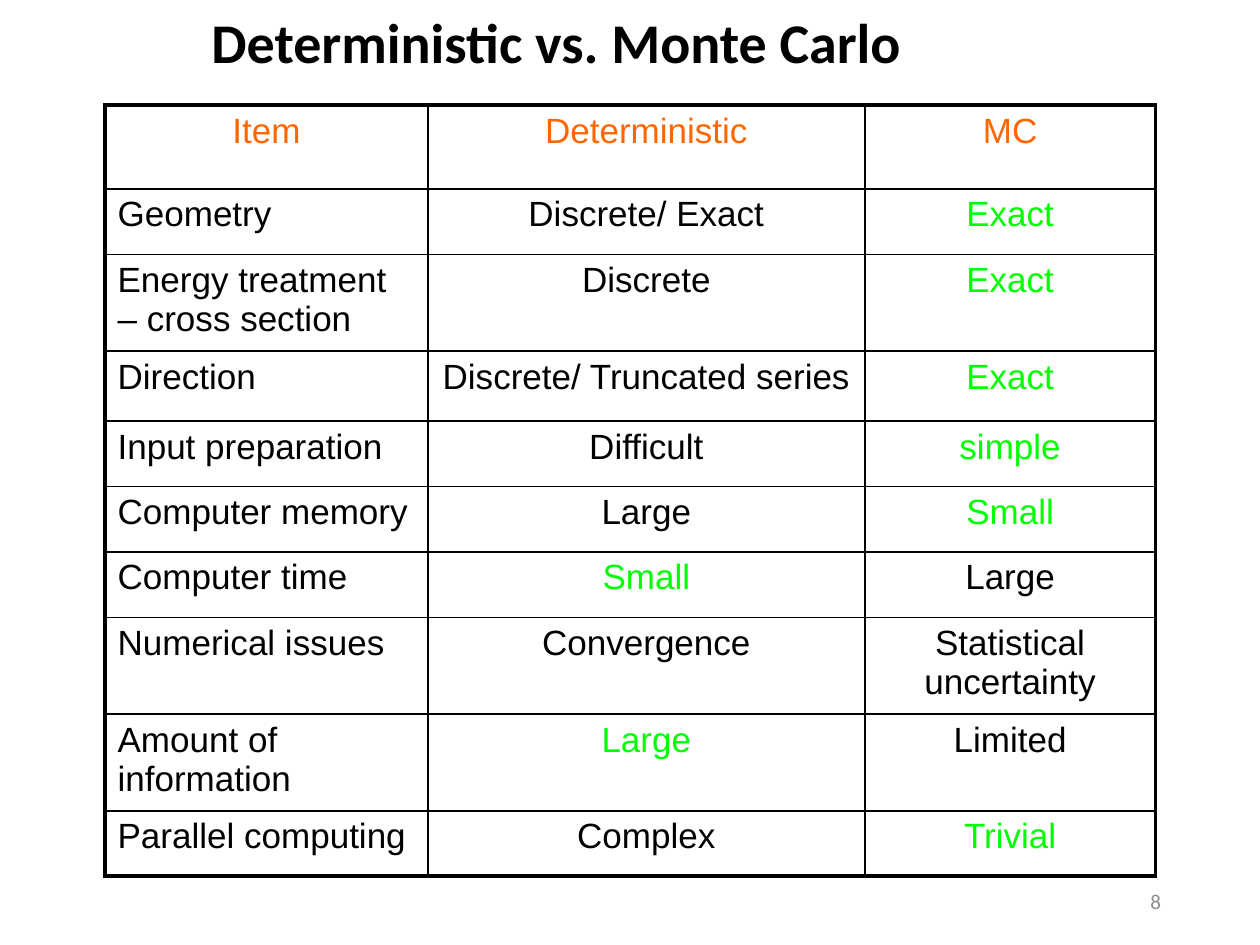
from lxml import etree
from pptx import Presentation
from pptx.dml.color import RGBColor
from pptx.enum import text as t
from pptx.oxml import ns
from pptx.util import Pt

BLACK = RGBColor(0, 0, 0)
ORANGE = RGBColor(0xFF, 0x66, 0)
GREEN = RGBColor(0, 0xFF, 0)
GREY = RGBColor(0x8C, 0x8C, 0x8C)
LEFT, MID, RIGHT = t.PP_ALIGN.LEFT, t.PP_ALIGN.CENTER, t.PP_ALIGN.RIGHT

THIN, THICK = 1, 2.25
WIDTHS = [184.5, 249.75, 166]
HEIGHTS = [48, 37.4, 40, 40, 37.4, 37.4, 37.4, 37.4, 40, 37.4]
HEADS = ["Item", "Deterministic", "MC"]
DET, MC = 1, 2
ROWS = [
    ("Geometry", "Discrete/ Exact", "Exact", MC),
    ("Energy treatment – cross section", "Discrete", "Exact", MC),
    ("Direction", "Discrete/ Truncated series", "Exact", MC),
    ("Input preparation", "Difficult", "simple", MC),
    ("Computer memory", "Large", "Small", MC),
    ("Computer time", "Small", "Large", DET),
    ("Numerical issues", "Convergence", "Statistical uncertainty", None),
    ("Amount of information", "Large", "Limited", DET),
    ("Parallel computing", "Complex", "Trivial", MC),
]


def write(frame, words, size=20, face="Arial", color=BLACK, bold=False,
          align=MID, lead=None):
    par = frame.paragraphs[0]
    par.alignment = align
    par.line_spacing = lead
    run = par.add_run()
    run.text = words
    font = run.font
    font.size, font.name, font.bold = Pt(size), face, bold
    font.color.rgb = color


def label(slide, box, words, **form):
    frame = slide.shapes.add_textbox(*map(Pt, box)).text_frame
    frame.word_wrap = True
    frame.vertical_anchor = t.MSO_ANCHOR.MIDDLE
    write(frame, words, **form)


def edge(cell, sides):
    props = cell._tc.get_or_add_tcPr()
    for spot, (side, width) in enumerate(sides.items()):
        line = etree.Element(ns.qn(f"a:ln{side}"), w=str(Pt(width)))
        fill = etree.SubElement(line, ns.qn("a:solidFill"))
        etree.SubElement(fill, ns.qn("a:srgbClr"), val=str(BLACK))
        props.insert(spot, line)


def grid(slide, left, top):
    last, end = len(HEIGHTS) - 1, len(WIDTHS) - 1
    table = slide.shapes.add_table(
        last + 1, end + 1, Pt(left), Pt(top),
        Pt(sum(WIDTHS)), Pt(sum(HEIGHTS))).table
    table.first_row = table.horz_banding = False
    for col, width in zip(table.columns, WIDTHS):
        col.width = Pt(width)
    for row, height in zip(table.rows, HEIGHTS):
        row.height = Pt(height)
    for y, (*words, best) in enumerate([(*HEADS, None), *ROWS]):
        for x, word in enumerate(words):
            cell = table.cell(y, x)
            cell.fill.background()
            edge(cell, {"L": THICK if x == 0 else THIN,
                        "R": THICK if x == end else THIN,
                        "T": THICK if y == 0 else THIN,
                        "B": THICK if y == last else THIN})
            color = ORANGE if y == 0 else GREEN if x == best else BLACK
            write(cell.text_frame, word, color=color,
                  align=LEFT if y and x == 0 else MID)


def main():
    deck = Presentation()
    deck.slide_width, deck.slide_height = Pt(720), Pt(540)
    slide = deck.slides.add_slide(deck.slide_layouts[6])
    label(slide, (-6, 0, 648, 52), "Deterministic vs. Monte Carlo",
          size=32, face="Calibri", bold=True, lead=0.9)
    grid(slide, 60, 60)
    label(slide, (508.5, 500.5, 162, 28.75), "8",
          size=12, face="Calibri", color=GREY, align=RIGHT)
    deck.save("out.pptx")


if __name__ == "__main__":
    main()
